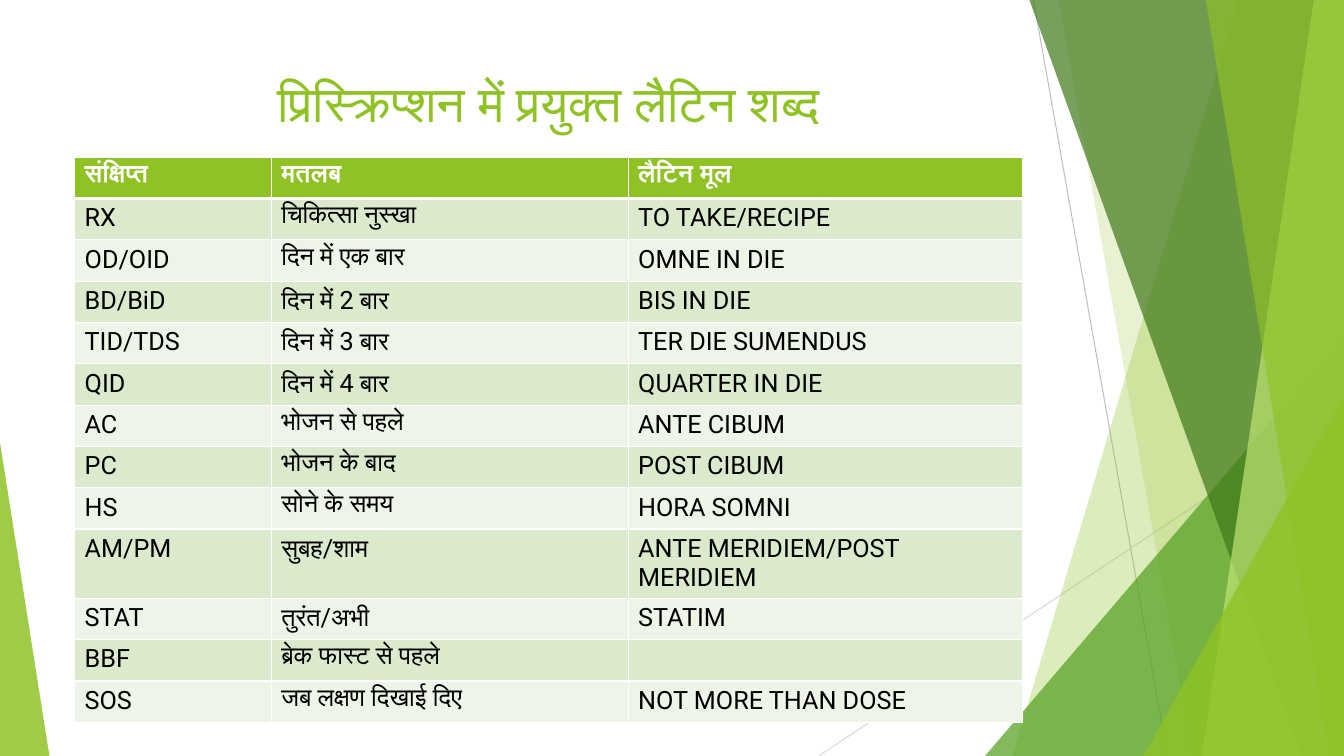
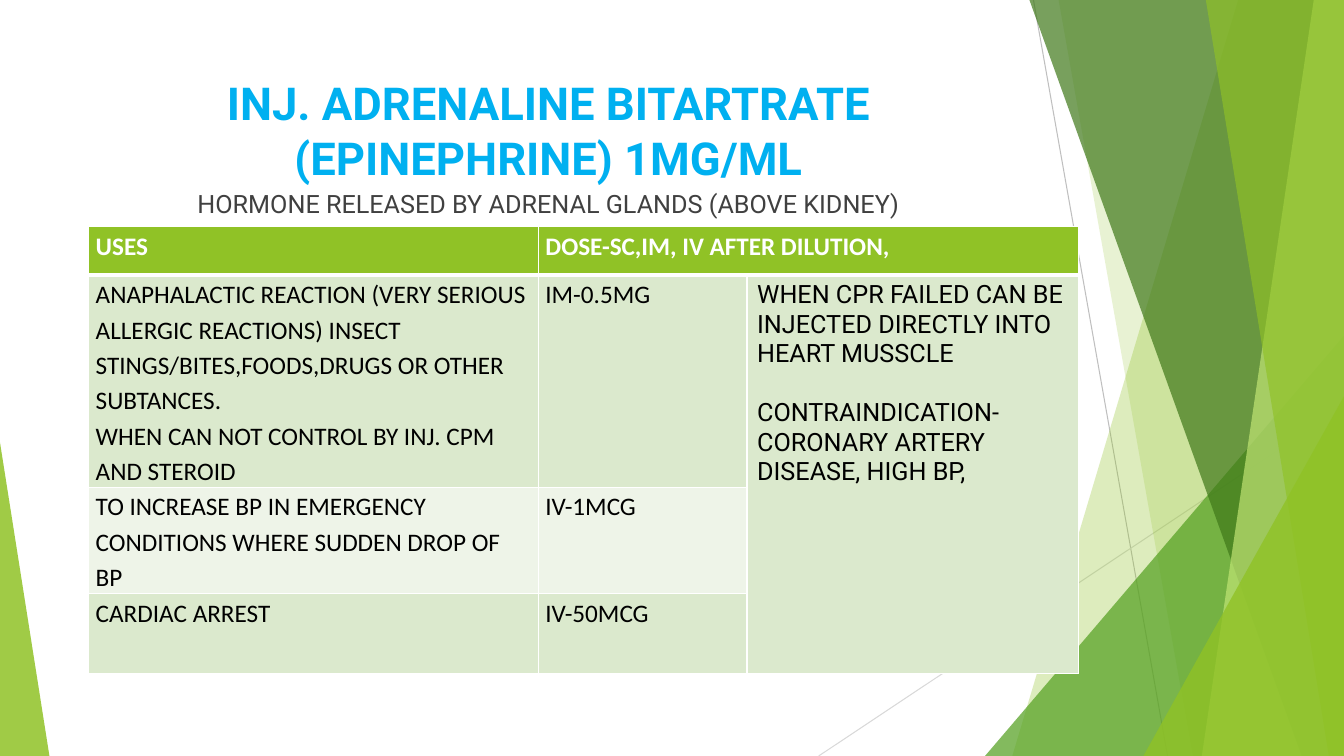
from dataclasses import dataclass

from lxml import etree
from pptx import Presentation
from pptx.dml.color import RGBColor
from pptx.enum.shapes import MSO_CONNECTOR, MSO_SHAPE
from pptx.enum.text import MSO_ANCHOR, MSO_AUTO_SIZE, PP_ALIGN
from pptx.oxml import parse_xml
from pptx.oxml.ns import nsdecls, qn
from pptx.util import Inches, Pt

COLORS = {
    "white": "FFFFFF", "black": "000000", "body": "404040", "blue": "00B0F0",
    "lime": "90C226", "green": "54A021", "forest": "3F7819", "pale": "C0E474",
    "band_dark": "DBE9CD", "band_light": "EEF4E8",
    "line_dark": "BFBFBF", "line_light": "D9D9D9",
}
WIDTH, HEIGHT = 13.33, 7.5
CONTENT_LEFT, CONTENT_WIDTH = 0.74, 9.4
HEADING_FONT = "Roboto"


@dataclass(frozen=True)
class Ray:
    start: tuple[float, float]
    end: tuple[float, float]
    color: str


@dataclass(frozen=True)
class Blade:
    """A panel reaching the right edge, with a slanted left side."""
    top_left: float
    bottom_left: float
    color: str
    opacity: int


@dataclass(frozen=True)
class Triangle:
    left: float
    top: float
    width: float
    apex: float
    color: str
    opacity: int


@dataclass(frozen=True)
class CellStyle:
    font: str
    line_spacing: float | None = None
    side_margin: float = 0.1
    top_margin: float = 0.05


@dataclass(frozen=True)
class TableLayout:
    left: float
    top: float
    columns: tuple[float, ...]
    rows: tuple[float, ...]
    style: CellStyle


BACKDROP = (
    Ray((10.25, 0), (11.58, HEIGHT), "line_dark"),
    Ray((WIDTH, 4.03), (8.12, HEIGHT), "line_light"),
    Blade(12.28, 10.04, "lime", 30),
    Blade(10.5, 11.83, "lime", 20),
    Triangle(9.77, 3.33, 3.56, 1, "green", 72),
    Blade(10.21, 12.91, "forest", 70),
    Blade(13.03, 11.92, "pale", 70),
    Blade(11.96, 13.18, "lime", 65),
    Triangle(11.34, 3.93, 1.99, 1, "lime", 80),
    Triangle(0, 4.39, 0.49, 0, "lime", 85),
)

LATIN_TERMS = (
    ("संक्षिप्त", "मतलब", "लैटिन मूल"),
    ("RX", "चिकित्सा नुस्खा", "TO TAKE/RECIPE"),
    ("OD/OID", "दिन में एक बार", "OMNE IN DIE"),
    ("BD/BiD", "दिन में 2 बार", "BIS IN DIE"),
    ("TID/TDS", "दिन में 3 बार", "TER DIE SUMENDUS"),
    ("QID", "दिन में 4 बार", "QUARTER IN DIE"),
    ("AC", "भोजन से पहले", "ANTE CIBUM"),
    ("PC", "भोजन के बाद", "POST CIBUM"),
    ("HS", "सोने के समय", "HORA SOMNI"),
    ("AM/PM", "सुबह/शाम", "ANTE MERIDIEM/POST MERIDIEM"),
    ("STAT", "तुरंत/अभी", "STATIM"),
    ("BBF", "ब्रेक फास्ट से पहले", ""),
    ("SOS", "जब लक्षण दिखाई दिए", "NOT MORE THAN DOSE"),
)
ADRENALINE_USES = (
    ("USES", "DOSE-SC,IM, IV AFTER DILUTION,", ""),
    ("ANAPHALACTIC REACTION (VERY SERIOUS ALLERGIC REACTIONS) INSECT "
     "STINGS/BITES,FOODS,DRUGS OR OTHER SUBTANCES.\n"
     "WHEN CAN NOT CONTROL BY INJ. CPM AND STEROID", "IM-0.5MG", ""),
    ("TO INCREASE BP IN EMERGENCY CONDITIONS WHERE SUDDEN DROP OF BP", "IV-1MCG", ""),
    ("CARDIAC ARREST", "IV-50MCG", ""),
)
CPR_NOTE = ("WHEN CPR FAILED CAN BE INJECTED DIRECTLY INTO HEART MUSSCLE\n"
            "CONTRAINDICATION-CORONARY ARTERY DISEASE, HIGH BP,")

PLAIN_CELL = CellStyle(HEADING_FONT)
TERMS_LAYOUT = TableLayout(CONTENT_LEFT, 1.56, (1.95, 3.54, 3.91),
                           (0.41,) * len(LATIN_TERMS), PLAIN_CELL)
USES_LAYOUT = TableLayout(0.88, 2.25, (4.46, 2.07, 3.29), (0.48, 1.75, 0.96, 0.79),
                          CellStyle("Calibri", 1.15, 0.07, 0))


def rgb(name: str) -> RGBColor:
    return RGBColor.from_string(COLORS[name])


def fill_translucent(shape, color: str, opacity: int) -> None:
    shape.shadow.inherit = False
    shape.line.fill.background()
    shape.fill.solid()
    shape.fill.fore_color.rgb = rgb(color)
    color_element = shape.element.spPr.find(f".//{qn('a:srgbClr')}")
    etree.SubElement(color_element, qn("a:alpha")).set("val", str(opacity * 1000))


def draw_ray(shapes, ray: Ray):
    connector = shapes.add_connector(
        MSO_CONNECTOR.STRAIGHT, *map(Inches, ray.start + ray.end))
    connector.line.color.rgb = rgb(ray.color)
    connector.line.width = Pt(0.75)
    etree.SubElement(connector.element.spPr, qn("a:effectLst"))
    return connector


def draw_blade(shapes, blade: Blade):
    builder = shapes.build_freeform(Inches(blade.top_left), 0)
    corners = ((WIDTH, 0), (WIDTH, HEIGHT), (blade.bottom_left, HEIGHT))
    builder.add_line_segments([(Inches(x), Inches(y)) for x, y in corners], close=True)
    shape = builder.convert_to_shape()
    fill_translucent(shape, blade.color, blade.opacity)
    return shape


def draw_triangle(shapes, triangle: Triangle):
    shape = shapes.add_shape(
        MSO_SHAPE.ISOSCELES_TRIANGLE, Inches(triangle.left), Inches(triangle.top),
        Inches(triangle.width), Inches(HEIGHT - triangle.top))
    shape.adjustments[0] = triangle.apex
    fill_translucent(shape, triangle.color, triangle.opacity)
    return shape


def move_backdrop_to_master(presentation, slide) -> None:
    """Draw the backdrop on a slide, then hand it to the master that all slides share."""
    draw = {Ray: draw_ray, Blade: draw_blade, Triangle: draw_triangle}
    master_tree = presentation.slide_master.shapes.element
    for index, part in enumerate(BACKDROP):
        element = draw[type(part)](slide.shapes, part).element
        element.find(f".//{qn('p:cNvPr')}").set("id", str(100 + index))
        master_tree.insert(2 + index, element)


def format_font(font, name: str, size: float, color: str, bold: bool = False) -> None:
    font.name, font.size, font.bold = name, Pt(size), bold
    font.color.rgb = rgb(color)


def fill_placeholder(shape, text: str, top: float, height: float,
                     size: float, color: str, bold: bool = False) -> None:
    shape.left, shape.top = Inches(CONTENT_LEFT), Inches(top)
    shape.width, shape.height = Inches(CONTENT_WIDTH), Inches(height)
    frame = shape.text_frame
    frame.text = text
    frame.word_wrap = True
    frame.auto_size = MSO_AUTO_SIZE.NONE
    frame.vertical_anchor = MSO_ANCHOR.TOP
    paragraph = frame.paragraphs[0]
    paragraph.alignment = PP_ALIGN.CENTER
    paragraph.space_before = Pt(0)
    properties = paragraph._p.get_or_add_pPr()
    properties.set("marL", "0")
    properties.set("indent", "0")
    etree.SubElement(properties, qn("a:buNone"))
    format_font(paragraph.runs[0].font, HEADING_FONT, size, color, bold)


def set_borders(cell, top: float, bottom: float) -> None:
    properties = cell._tc.get_or_add_tcPr()
    widths = {"lnL": 1, "lnR": 1, "lnT": top, "lnB": bottom}
    for index, (side, width) in enumerate(widths.items()):
        properties.insert(index, parse_xml(
            f'<a:{side} {nsdecls("a")} w="{Pt(width)}"><a:solidFill>'
            f'<a:srgbClr val="{COLORS["white"]}"/></a:solidFill></a:{side}>'))


def write_cell(cell, text: str, style: CellStyle, color: str, bold: bool = False) -> None:
    cell.text = text
    cell.margin_left = cell.margin_right = Inches(style.side_margin)
    cell.margin_top = cell.margin_bottom = Inches(style.top_margin)
    for paragraph in cell.text_frame.paragraphs:
        if style.line_spacing:
            paragraph.line_spacing = style.line_spacing
        format_font(paragraph.font, style.font, 18, color, bold)
        for run in paragraph.runs:
            format_font(run.font, style.font, 18, color, bold)


def add_banded_table(slide, layout: TableLayout, content):
    table = slide.shapes.add_table(
        len(layout.rows), len(layout.columns), Inches(layout.left), Inches(layout.top),
        Inches(sum(layout.columns)), Inches(sum(layout.rows))).table
    table.horz_banding = False
    for column, width in zip(table.columns, layout.columns):
        column.width = Inches(width)
    for index, (row, height, texts) in enumerate(zip(table.rows, layout.rows, content)):
        row.height = Inches(height)
        header = index == 0
        band = "lime" if header else ("band_light", "band_dark")[index % 2]
        for cell, text in zip(row.cells, texts):
            write_cell(cell, text, layout.style, "white" if header else "black", header)
            cell.fill.solid()
            cell.fill.fore_color.rgb = rgb(band)
            set_borders(cell, 3 if index == 1 else 1, 3 if header else 1)
    return table


def build_terms_slide(slide) -> None:
    fill_placeholder(slide.shapes.title, "प्रिस्क्रिप्शन में प्रयुक्त लैटिन शब्द",
                     0.67, 0.85, 36, "lime")
    add_banded_table(slide, TERMS_LAYOUT, LATIN_TERMS)


def build_adrenaline_slide(slide) -> None:
    fill_placeholder(slide.shapes.title, "INJ. ADRENALINE BITARTRATE (EPINEPHRINE) 1MG/ML",
                     0.7, 1.23, 32.4, "blue", bold=True)
    fill_placeholder(slide.placeholders[1],
                     "HORMONE RELEASED BY ADRENAL GLANDS (ABOVE KIDNEY)",
                     1.82, 0.4, 18, "body")
    table = add_banded_table(slide, USES_LAYOUT, ADRENALINE_USES)
    table.cell(0, 1).merge(table.cell(0, 2))
    note = table.cell(1, 2)
    note.merge(table.cell(3, 2))
    write_cell(note, CPR_NOTE, PLAIN_CELL, "black")
    note.text_frame.paragraphs[1].space_before = Pt(21)


def main() -> None:
    presentation = Presentation()
    presentation.slide_width, presentation.slide_height = Inches(WIDTH), Inches(HEIGHT)
    layouts = presentation.slide_layouts
    terms_slide = presentation.slides.add_slide(layouts.get_by_name("Title Only"))
    move_backdrop_to_master(presentation, terms_slide)
    build_terms_slide(terms_slide)
    build_adrenaline_slide(
        presentation.slides.add_slide(layouts.get_by_name("Title and Content")))
    presentation.save("out.pptx")


if __name__ == "__main__":
    main()
